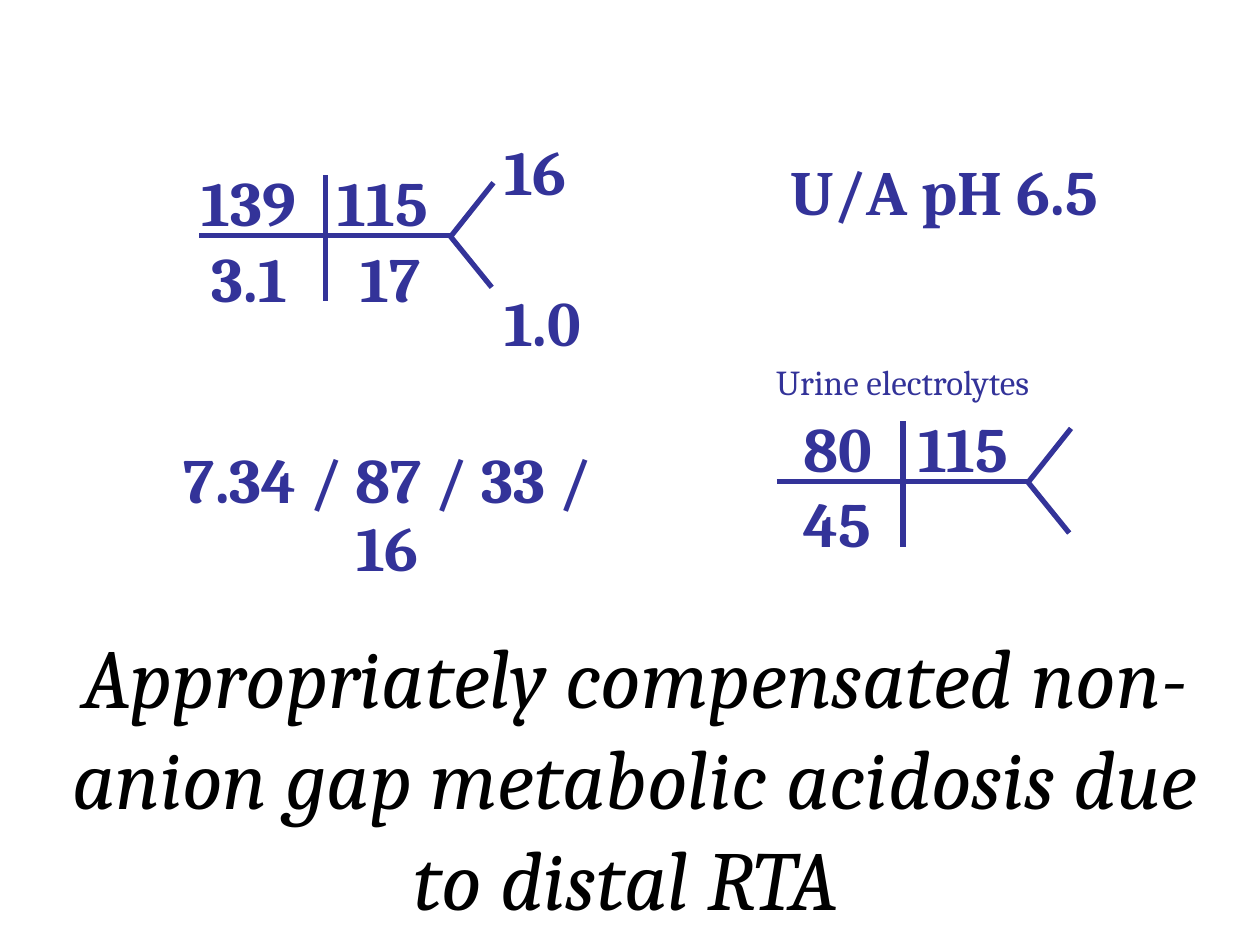
from lxml.etree import SubElement
from pptx import Presentation
from pptx.dml.color import RGBColor
from pptx.enum.shapes import MSO_CONNECTOR as CONN, MSO_SHAPE as SHAPE
from pptx.enum.text import MSO_ANCHOR as ANCHOR, MSO_AUTO_SIZE as AUTO, PP_ALIGN as ALIGN
from pptx.oxml.ns import qn
from pptx.util import Pt


def color(value):
    return RGBColor.from_string(value)


class Sheet:
    font = "Cambria"
    ink = "333399"
    black = "000000"
    white = "FFFFFF"
    size = 36
    weight = 3

    def __init__(self, slide):
        self.slide = slide

    def paragraph(self, p, text, size=size, ink=ink, bold=True, italic=False):
        r = p.add_run()
        r.text = text
        r.font.name = self.font
        r.font.size = Pt(size)
        r.font.bold = bold
        r.font.italic = italic
        r.font.color.rgb = color(ink)

    def text_box(self, shapes, x, y, w, h, wrap=True, anchor=ANCHOR.TOP):
        tf = shapes.add_textbox(Pt(x), Pt(y), Pt(w), Pt(h)).text_frame
        tf.word_wrap = wrap
        tf.auto_size = AUTO.SHAPE_TO_FIT_TEXT
        tf.vertical_anchor = anchor
        return tf

    def tabs(self, p, stops):
        tab_list = SubElement(p._p.get_or_add_pPr(), qn("a:tabLst"))
        for stop in stops:
            SubElement(tab_list, qn("a:tab"), pos=str(Pt(stop)), algn="l")

    def line(self, shapes, x1, y1, x2, y2):
        c = shapes.add_connector(CONN.STRAIGHT, Pt(x1), Pt(y1), Pt(x2), Pt(y2))
        c.line.color.rgb = color(self.ink)
        c.line.width = Pt(self.weight)
        SubElement(c._element.spPr, qn("a:effectLst"))

    def lab_grid(self, x, y, rows):
        shapes = self.slide.shapes.add_group_shape().shapes
        tf = self.text_box(shapes, x, y, 185.8, 93.6)
        for i, (text, stops) in enumerate(rows):
            p = tf.add_paragraph() if i else tf.paragraphs[0]
            self.tabs(p, stops)
            self.paragraph(p, text)
        for x1, y1, x2, y2 in [(6, 44.6, 150, 44.6), (78, 82, 78, 10),
                               (149, 44.6, 173, 74.2), (150, 44.6, 174, 14.4)]:
            self.line(shapes, x + x1, y + y1, x + x2, y + y2)
        return shapes

    def side_values(self, shapes, x, y, upper, lower):
        tf = self.text_box(shapes, x, y, 59.8, 136.8, wrap=False)
        self.paragraph(tf.paragraphs[0], upper)
        p = tf.add_paragraph()
        p.space_before = Pt(43)
        self.paragraph(p, lower)

    def label(self, x, y, h, text, size=size, bold=True):
        tf = self.text_box(self.slide.shapes, x, y, 287.3, h, anchor=ANCHOR.MIDDLE)
        p = tf.paragraphs[0]
        p.alignment = ALIGN.CENTER
        p.line_spacing = 0.9
        self.paragraph(p, text, size, bold=bold)

    def statement(self, x, y, w, h, text):
        sp = self.slide.shapes.add_shape(SHAPE.RECTANGLE, Pt(x), Pt(y), Pt(w), Pt(h))
        sp.shadow.inherit = False
        sp.fill.solid()
        sp.fill.fore_color.rgb = color(self.white)
        sp.line.fill.background()
        tf = sp.text_frame
        tf.word_wrap = True
        tf.auto_size = AUTO.SHAPE_TO_FIT_TEXT
        tf.vertical_anchor = ANCHOR.TOP
        p = tf.paragraphs[0]
        p.alignment = ALIGN.CENTER
        self.paragraph(p, text, 48, self.black, bold=False, italic=True)


def main():
    prs = Presentation()
    prs.slide_width, prs.slide_height = Pt(720), Pt(540)
    s = Sheet(prs.slides.add_slide(prs.slide_layouts[6]))

    serum = s.lab_grid(108, 90, [("139\t115", [78]), ("\t3.1\t17", [6, 91])])
    s.side_values(serum, 281, 72, "16", "1.0")
    s.label(77.8, 272.2, 46, "7.34 / 87 / 33 / 16")
    s.label(396, 88.6, 46, "U/A pH 6.5")
    s.lab_grid(438, 230.4, [("\t80\t115", [14, 79.5]), ("\t45", [14])])
    s.label(372.2, 205.2, 28.8, "Urine electrolytes", 20, bold=False)
    s.statement(23.8, 353.5, 678.2, 180,
                "Appropriately compensated non-anion gap metabolic acidosis due to distal RTA ")
    prs.save("out.pptx")


if __name__ == "__main__":
    main()
